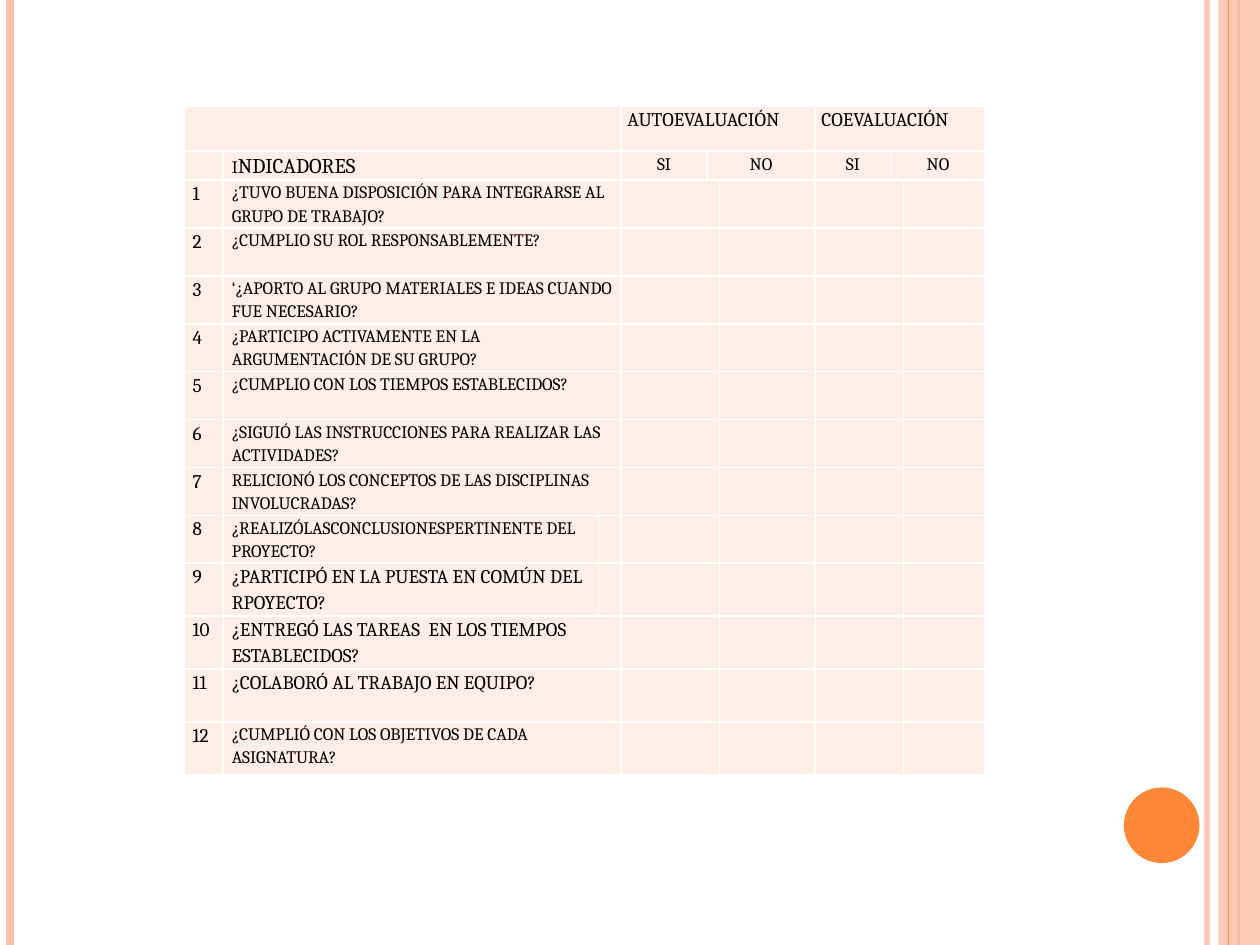
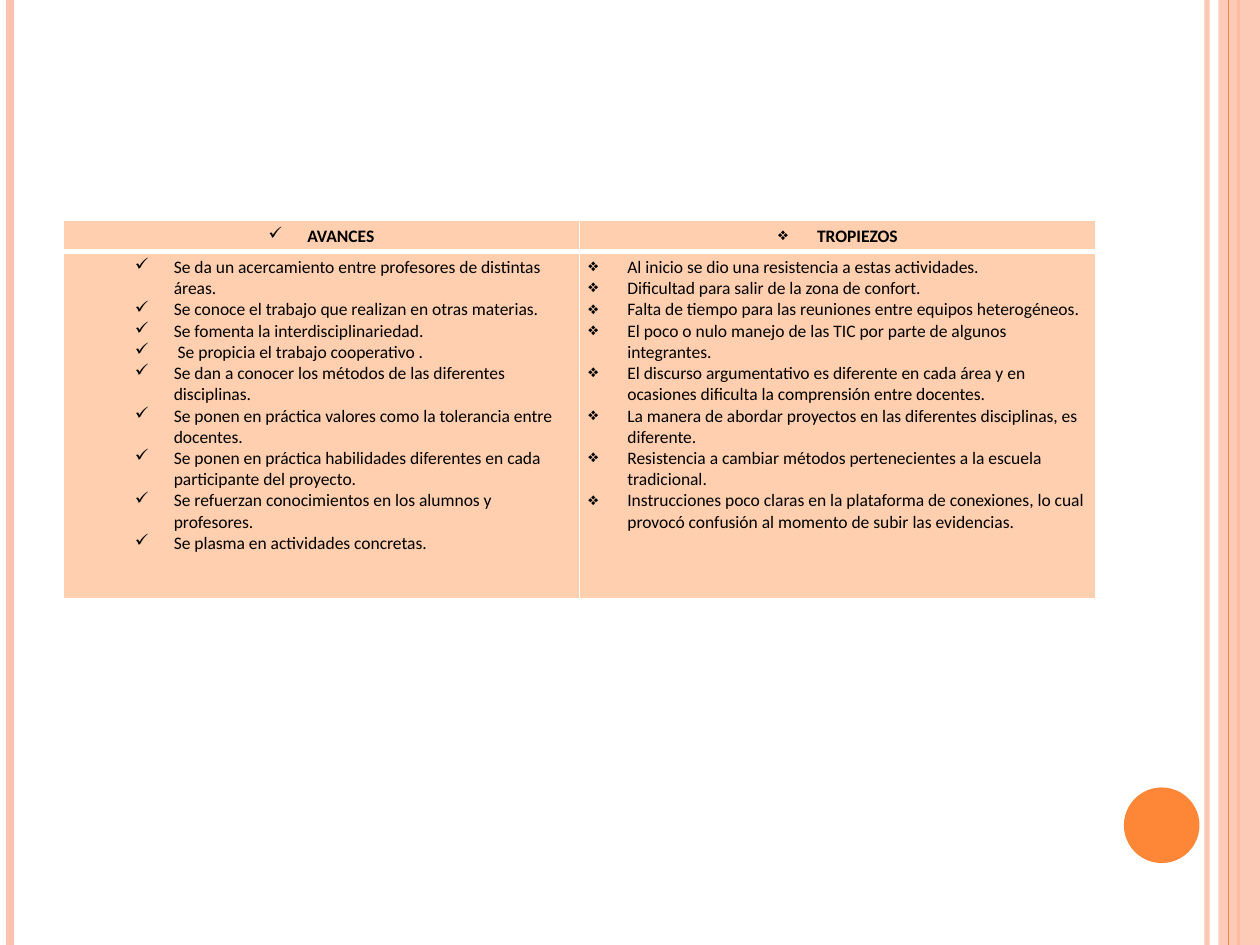
from lxml import etree
from pptx import Presentation
from pptx.dml.color import RGBColor
from pptx.enum.shapes import MSO_CONNECTOR, MSO_SHAPE
from pptx.enum.text import PP_ALIGN
from pptx.oxml.ns import qn
from pptx.util import Inches, Pt

STRAIGHT = MSO_CONNECTOR.STRAIGHT
RECTANGLE, OVAL = MSO_SHAPE.RECTANGLE, MSO_SHAPE.OVAL
LEFT, CENTER = PP_ALIGN.LEFT, PP_ALIGN.CENTER

WIDTH, HEIGHT = 10, 7.5
BLANK_LAYOUT = 6
COLORS = {
    "salmon": "FEC3AE",
    "orange": "FE8637",
    "pale": "FFEDE8",
    "peach": "FFCFAF",
    "white": "FFFFFF",
    "black": "000000",
}

# x, colour, line width in points, opacity in percent
RULES_BEHIND = [(9.58, "salmon", 3, 93), (0.08, "salmon", 4.5, 100), (9.83, "orange", 1.5, 100)]
RULES_FRONT = [(9.75, "orange", 0.75, 100)]
BAND = (9.67, 0, 0.33, HEIGHT)
DISC = (8.92, 6.25, 0.6, 0.6)

# question, text size
QUESTIONS = [
    ("¿TUVO BUENA DISPOSICIÓN PARA INTEGRARSE AL GRUPO DE TRABAJO?", 10),
    ("¿CUMPLIO SU ROL RESPONSABLEMENTE?", 10),
    ("‘¿APORTO AL GRUPO MATERIALES E IDEAS CUANDO FUE NECESARIO?", 10),
    ("¿PARTICIPO ACTIVAMENTE EN LA ARGUMENTACIÓN DE SU GRUPO?", 10),
    ("¿CUMPLIO CON LOS TIEMPOS ESTABLECIDOS?", 10),
    ("¿SIGUIÓ LAS INSTRUCCIONES PARA REALIZAR LAS ACTIVIDADES?", 10),
    ("RELICIONÓ LOS CONCEPTOS DE LAS DISCIPLINAS INVOLUCRADAS?", 10),
    ("¿REALIZÓLASCONCLUSIONESPERTINENTE DEL PROYECTO?", 10),
    ("¿PARTICIPÓ EN LA PUESTA EN COMÚN DEL RPOYECTO?", 11),
    ("¿ENTREGÓ LAS TAREAS  EN LOS TIEMPOS ESTABLECIDOS?", 11),
    ("¿COLABORÓ AL TRABAJO EN EQUIPO?", 11),
    ("¿CUMPLIÓ CON LOS OBJETIVOS DE CADA ASIGNATURA?", 10),
]
SPLIT_QUESTIONS = (8, 9)
EVALUATIONS = {3: "AUTOEVALUACIÓN", 6: "COEVALUACIÓN"}
ANSWERS = {3: "SI", 4: "NO", 6: "SI", 7: "NO"}
RUBRIC_COLUMNS = [0.31, 2.98, 0.18, 0.68, 0.1, 0.76, 0.6, 0.1, 0.65]
RUBRIC_ROWS = [0.36, 0.23] + [0.38] * 8 + [0.42] * 4

# heading, bullet, left margin of the list, items
BALANCE = [
    ("AVANCES", "✓", 0.81, [
        "Se da un acercamiento entre profesores de distintas áreas.",
        "Se conoce el trabajo que realizan en otras materias.",
        "Se fomenta la interdisciplinariedad.",
        " Se propicia el trabajo cooperativo .",
        "Se dan a conocer los métodos de las diferentes disciplinas.",
        "Se ponen en práctica valores como la tolerancia entre docentes.",
        "Se ponen en práctica habilidades diferentes en cada participante del proyecto.",
        "Se refuerzan conocimientos en los alumnos y profesores.",
        "Se plasma en actividades concretas.",
    ]),
    ("TROPIEZOS", "❖", 0.31, [
        "Al inicio se dio una resistencia a estas actividades.",
        "Dificultad para salir de la zona de confort.",
        "Falta de tiempo para las reuniones entre equipos heterogéneos.",
        "El poco o nulo manejo de las TIC por parte de algunos integrantes.",
        "El discurso argumentativo es diferente en cada área y en ocasiones "
        "dificulta la comprensión entre docentes.",
        "La manera de abordar proyectos en las diferentes disciplinas, es diferente.",
        "Resistencia a cambiar métodos pertenecientes a la escuela tradicional.",
        "Instrucciones poco claras en la plataforma de conexiones, lo cual "
        "provocó confusión al momento de subir las evidencias.",
    ]),
]
HANGING = 0.31
BALANCE_COLUMNS = [4.1, 4.1]
BALANCE_ROWS = [0.24, 2.75]


def rgb(name):
    return RGBColor.from_string(COLORS[name])


def set_opacity(shape, percent):
    color = next(shape.element.spPr.iter(qn("a:srgbClr")))
    etree.SubElement(color, qn("a:alpha"), val=str(percent * 1000))


def add_rule(slide, x, color, points, opacity):
    rule = slide.shapes.add_connector(STRAIGHT, Inches(x), 0, Inches(x), Inches(HEIGHT))
    rule.line.color.rgb = rgb(color)
    rule.line.width = Pt(points)
    etree.SubElement(rule.element.spPr, qn("a:effectLst"))
    if opacity < 100:
        set_opacity(rule, opacity)


def add_filled(slide, preset, place, color):
    shape = slide.shapes.add_shape(preset, *map(Inches, place))
    shape.shadow.inherit = False
    shape.fill.solid()
    shape.fill.fore_color.rgb = rgb(color)
    shape.line.fill.background()
    return shape


def decorate_layout(layout, slide):
    """Draw the bands on an empty slide, then move them to its layout."""
    for placeholder in list(layout.placeholders):
        layout.shapes.element.remove(placeholder.element)
    for rule in RULES_BEHIND:
        add_rule(slide, *rule)
    set_opacity(add_filled(slide, RECTANGLE, BAND, "salmon"), 87)
    for rule in RULES_FRONT:
        add_rule(slide, *rule)
    add_filled(slide, OVAL, DISC, "orange")
    for shape in list(slide.shapes):
        layout.shapes.element.append(shape.element)


def set_borders(cell, top=1, bottom=1):
    properties = cell._tc.get_or_add_tcPr()
    for index, (side, points) in enumerate(
        [("lnL", 1), ("lnR", 1), ("lnT", top), ("lnB", bottom)]
    ):
        line = etree.Element(qn(f"a:{side}"), w=str(Pt(points)))
        fill = etree.SubElement(line, qn("a:solidFill"))
        etree.SubElement(fill, qn("a:srgbClr"), val=COLORS["white"])
        properties.insert(index, line)


def add_plain_table(slide, left, top, columns, rows, color, margin_y):
    frame = slide.shapes.add_table(
        len(rows), len(columns), Inches(left), Inches(top),
        Inches(sum(columns)), Inches(sum(rows)),
    )
    table = frame.table
    table.first_row = table.horz_banding = False
    for column, width in zip(table.columns, columns):
        column.width = Inches(width)
    for row, height in zip(table.rows, rows):
        row.height = Inches(height)
    for cell in table.iter_cells():
        cell.fill.solid()
        cell.fill.fore_color.rgb = rgb(color)
        cell.margin_left = cell.margin_right = Inches(0.07)
        cell.margin_top = cell.margin_bottom = Inches(margin_y)
    return table


def style(paragraph, font, size, align=LEFT, bold=False):
    paragraph.alignment = align
    paragraph.font.name = font
    paragraph.font.size = Pt(size)
    paragraph.font.bold = bold
    paragraph.font.color.rgb = rgb("black")


def write(cell, text, size, align=LEFT):
    paragraph = cell.text_frame.paragraphs[0]
    paragraph.text = text
    paragraph.line_spacing = 1.15
    style(paragraph, "Cambria", size, align)
    return paragraph


def merge_right(table, row, first, last):
    table.cell(row, first).merge(table.cell(row, last))


def build_rubric(slide):
    table = add_plain_table(slide, 1.46, 0.84, RUBRIC_COLUMNS, RUBRIC_ROWS, "pale", 0)
    for cell in table.iter_cells():
        set_borders(cell)
        paragraph = cell.text_frame.paragraphs[0]
        etree.SubElement(paragraph._p, qn("a:endParaRPr"), sz="1000")
    for first in (0, 3, 6):
        merge_right(table, 0, first, first + 2)
    for column, text in EVALUATIONS.items():
        cell = table.cell(0, column)
        cell.margin_left = cell.margin_right = Inches(0.05)
        write(cell, text, 11)

    for first in (1, 4, 7):
        merge_right(table, 1, first, first + 1)
    heading = write(table.cell(1, 1), "I", 12)
    heading.runs[0].font.size = Pt(10)
    heading.add_run().text = "NDICADORES"
    for column, text in ANSWERS.items():
        write(table.cell(1, column), text, 10, CENTER)

    for number, (question, size) in enumerate(QUESTIONS, 1):
        row = number + 1
        for first in (3, 6) if number in SPLIT_QUESTIONS else (1, 3, 6):
            merge_right(table, row, first, first + 1)
        write(table.cell(row, 0), str(number), 11)
        write(table.cell(row, 1), question, size)


def add_bulleted(paragraph, text, bullet, margin, align=LEFT, bold=False):
    paragraph.text = text
    properties = paragraph._p.get_or_add_pPr()
    properties.set("marL", str(Inches(margin)))
    properties.set("indent", str(-Inches(HANGING)))
    etree.SubElement(properties, qn("a:buChar"), char=bullet)
    style(paragraph, "Calibri", 10, align, bold)


def build_balance(slide):
    table = add_plain_table(slide, 0.5, 1.75, BALANCE_COLUMNS, BALANCE_ROWS, "peach", 0.04)
    for column, (heading, bullet, margin, items) in enumerate(BALANCE):
        head, body = table.cell(0, column), table.cell(1, column)
        set_borders(head, bottom=3)
        set_borders(body, top=3)
        add_bulleted(head.text_frame.paragraphs[0], heading, bullet, HANGING, CENTER, True)
        frame = body.text_frame
        for index, item in enumerate(items):
            paragraph = frame.add_paragraph() if index else frame.paragraphs[0]
            add_bulleted(paragraph, item, bullet, margin)


def main():
    deck = Presentation()
    deck.slide_width, deck.slide_height = Inches(WIDTH), Inches(HEIGHT)
    layout = deck.slide_layouts[BLANK_LAYOUT]
    rubric, balance = (deck.slides.add_slide(layout) for _ in range(2))
    decorate_layout(layout, rubric)
    build_rubric(rubric)
    build_balance(balance)
    deck.save("out.pptx")


if __name__ == "__main__":
    main()
